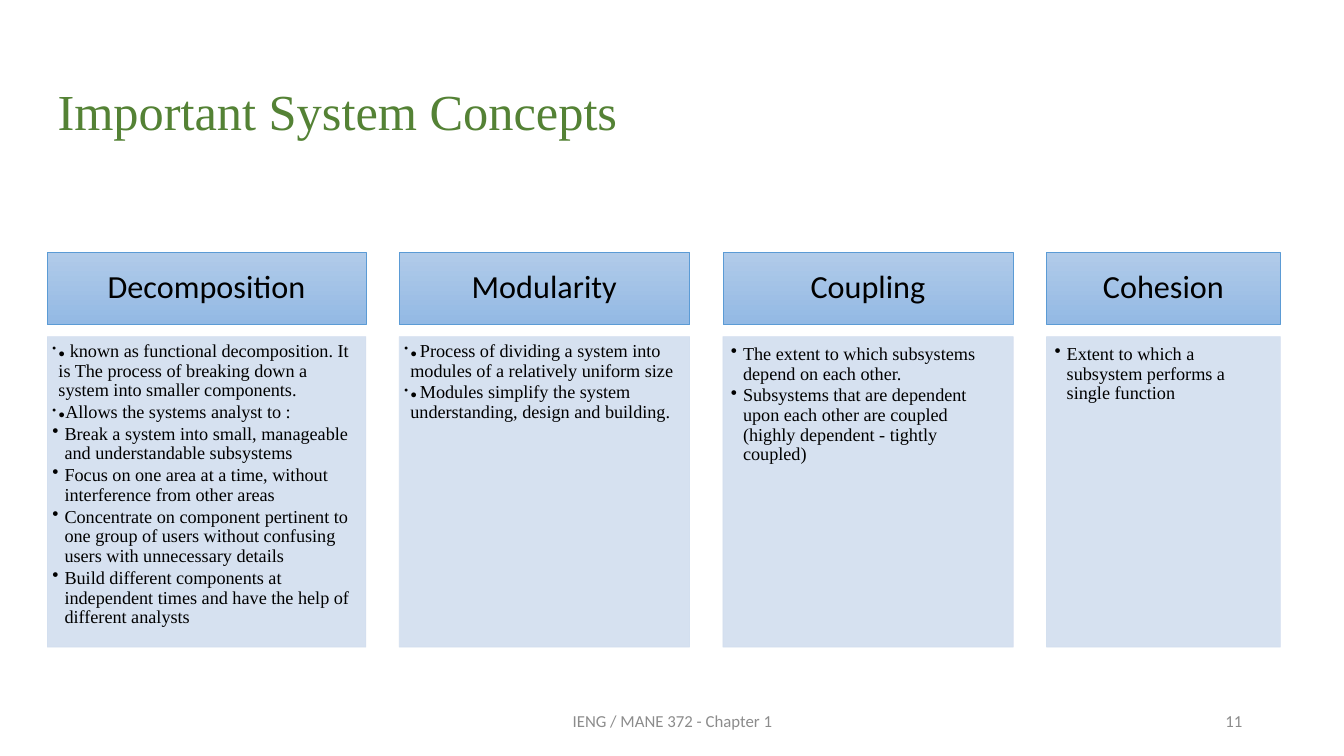
"""Build the slide on important system concepts."""
import pptx
import pptx.dml.color
import pptx.enum.shapes
import pptx.enum.text
import pptx.oxml.ns
import pptx.util
from lxml import etree

RGB = pptx.dml.color.RGBColor
BLACK = RGB(0x00, 0x00, 0x00)
GREEN = RGB(0x54, 0x82, 0x35)
GREY = RGB(0x8C, 0x8C, 0x8C)
BLUE = RGB(0x5B, 0x9B, 0xD5)
LIGHT = RGB(0xB1, 0xCB, 0xE9)
DARK = RGB(0x93, 0xB9, 0xE4)
PALE = RGB(0xD2, 0xDE, 0xEF)
SERIF, SANS = "Times New Roman", "Calibri"
RECT = pptx.enum.shapes.MSO_SHAPE.RECTANGLE
ALIGN = pptx.enum.text.PP_ALIGN
ANCHOR = pptx.enum.text.MSO_ANCHOR
Pt, Inches, qn = pptx.util.Pt, pptx.util.Inches, pptx.oxml.ns.qn

deck = pptx.Presentation()
deck.slide_width, deck.slide_height = Inches(13.33), Inches(7.5)
slide = deck.slides.add_slide(deck.slide_layouts[5])


def place(left, top, width, height):
    """Turn percentages of the slide into lengths."""
    wide, high = deck.slide_width / 100, deck.slide_height / 100
    return int(left * wide), int(top * high), int(width * wide), int(height * high)


def style(para, size, face, color):
    """Format every run of a paragraph."""
    for run in para.runs:
        run.font.size = Pt(size)
        run.font.name = face
        run.font.color.rgb = color


title = slide.shapes.title
title.left, title.top, title.width, title.height = place(3.53, 10.8, 86.27, 12.93)
frame = title.text_frame
frame.text = "Important System Concepts"
frame.auto_size = pptx.enum.text.MSO_AUTO_SIZE.NONE
frame.vertical_anchor = ANCHOR.TOP
para = frame.paragraphs[0]
para.alignment = ALIGN.LEFT
para.line_spacing = 0.9
style(para, 36, SERIF, GREEN)

cards = [
    ("Decomposition", 23.7, 0.05, [
        ("●", " known as functional decomposition. It is The process of "
              "breaking down a system into smaller components."),
        ("●", "Allows the systems analyst to :"),
        ("", "Break a system into small, manageable and understandable subsystems"),
        ("", "Focus on one area at a time, without interference from other areas"),
        ("", "Concentrate on component pertinent to one group of users "
             "without confusing users with unnecessary details"),
        ("", "Build different components at independent times and have "
             "the help of different analysts"),
    ]),
    ("Modularity", 21.6, 0.05, [
        ("● ", "Process of dividing a system into modules of a relatively uniform size"),
        ("● ", "Modules simplify the system understanding, design and building."),
    ]),
    ("Coupling", 21.6, 0.08, [
        ("", "The extent to which subsystems depend on each other."),
        ("", "Subsystems that are dependent upon each other are coupled "
             "(highly dependent - tightly coupled)"),
    ]),
    ("Cohesion", 17.4, 0.08, [
        ("", "Extent to which a subsystem performs a single function"),
    ]),
]

left, gap = 3.53, 2.48
for name, width, inset, points in cards:
    head = slide.shapes.add_shape(RECT, *place(left, 33.33, width, 9.6))
    head.fill.gradient()
    head.fill.gradient_angle = 270
    for stop, color in zip(head.fill.gradient_stops, (LIGHT, DARK)):
        stop.color.rgb = color
    head.line.color.rgb = BLUE
    head.text_frame.text = name
    head.text_frame.vertical_anchor = ANCHOR.MIDDLE
    para = head.text_frame.paragraphs[0]
    para.alignment = ALIGN.CENTER
    para.line_spacing = 0.9
    style(para, 23, SANS, BLACK)

    body = slide.shapes.add_shape(RECT, *place(left, 44.53, width, 41.07))
    body.fill.solid()
    body.fill.fore_color.rgb = PALE
    body.line.color.rgb = PALE
    for shape in (head, body):
        shape.shadow.inherit = False
        shape.line.width = Pt(0.5)
    for tint in body._element.spPr.iter(qn("a:srgbClr")):
        etree.SubElement(tint, qn("a:alpha"), val="90000")

    frame = body.text_frame
    frame.word_wrap = True
    frame.vertical_anchor = ANCHOR.TOP
    frame.margin_left = frame.margin_top = Inches(inset)
    frame.margin_right = Inches(inset + 0.01)
    frame.margin_bottom = Inches(inset + 0.02)
    for row, (mark, text) in enumerate(points):
        para = frame.add_paragraph() if row else frame.paragraphs[0]
        para.alignment = ALIGN.LEFT
        para.line_spacing = 0.9
        para.space_after = Pt(1.5)
        props = para._p.get_or_add_pPr()
        dent = Inches(0.06 if mark else 0.12)
        props.set("marL", str(dent))
        props.set("indent", str(-dent))
        etree.SubElement(props, qn("a:buChar"), char="•")
        para.text = mark or text
        if mark:
            para.add_run().text = text
        style(para, 13, SERIF, BLACK)
        if mark:
            para.runs[0].font.size = Pt(8)
    left += width + gap

notes = [
    ("IENG / MANE 372 - Chapter 1", 33.16, 33.76, ALIGN.CENTER),
    ("11", 70.67, 22.5, ALIGN.RIGHT),
]
for text, start, width, align in notes:
    box = slide.shapes.add_textbox(*place(start, 92.67, width, 5.33))
    box.text_frame.word_wrap = True
    box.text_frame.vertical_anchor = ANCHOR.MIDDLE
    box.text_frame.text = text
    para = box.text_frame.paragraphs[0]
    para.alignment = align
    style(para, 12, SANS, GREY)

deck.save("out.pptx")
